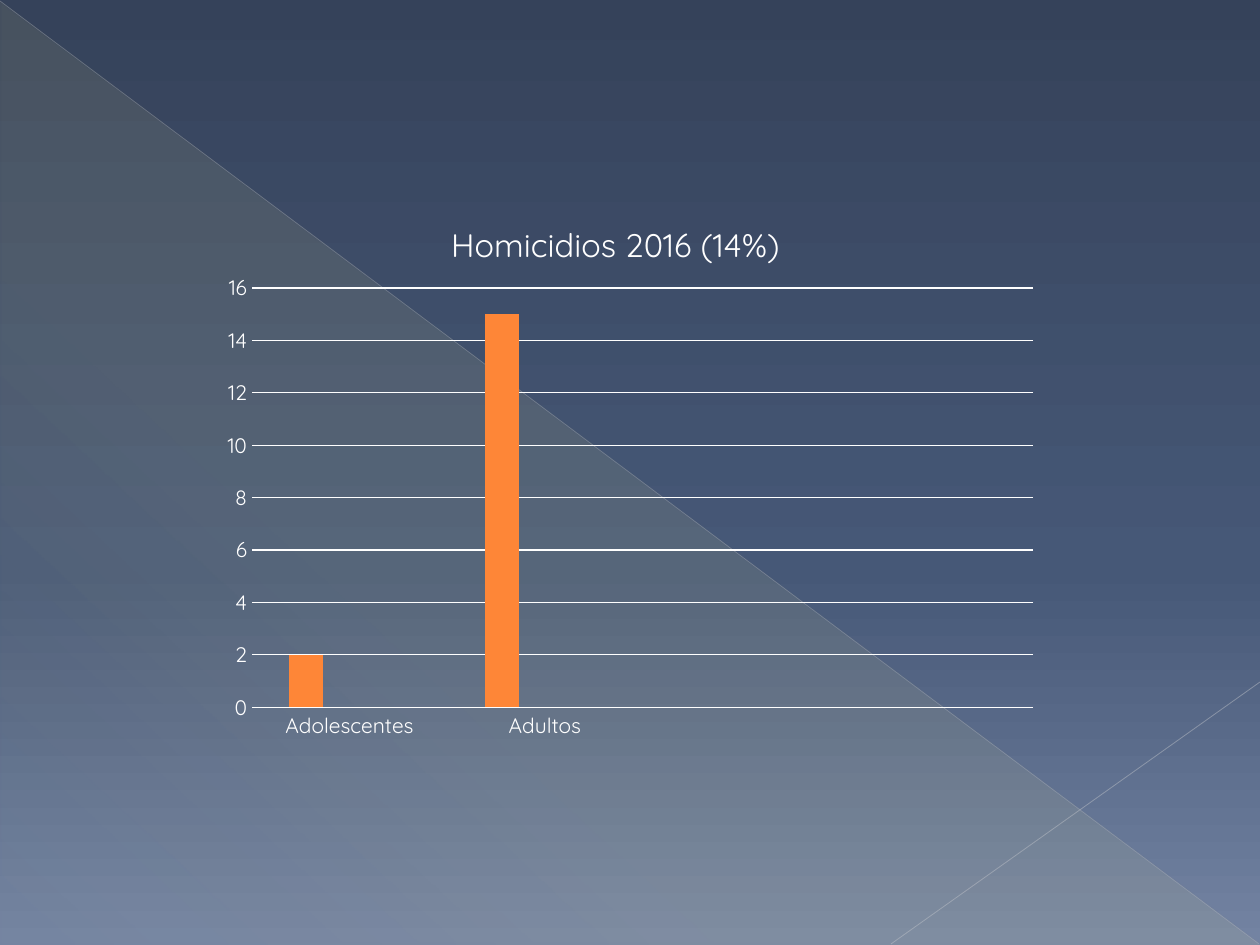
from dataclasses import dataclass

from lxml import etree
from pptx import Presentation
from pptx.chart.data import CategoryChartData
from pptx.dml.color import RGBColor
from pptx.enum.chart import XL_CHART_TYPE, XL_TICK_MARK
from pptx.enum.shapes import MSO_CONNECTOR, MSO_SHAPE
from pptx.oxml import parse_xml
from pptx.oxml.ns import nsdecls, qn
from pptx.util import Emu, Pt

COLUMNS = XL_CHART_TYPE.COLUMN_CLUSTERED
NO_TICK = XL_TICK_MARK.NONE
TRIANGLE = MSO_SHAPE.RIGHT_TRIANGLE
STRAIGHT = MSO_CONNECTOR.STRAIGHT
EMU_PER_PX = 914400 / 126
BLANK_LAYOUT = 6


@dataclass(frozen=True)
class Theme:
    font: str = "Quicksand"
    text: str = "FFFFFF"
    series: tuple = ("FE8637", "7598D9", "B32C16")
    # Gradient stops: position in %, colour, opacity in %
    sky: tuple = ((0, "35425A", 100), (60, "465877", 100), (100, "7383A2", 100))
    glow: tuple = ((0, "FFF39D", 10), (70, "FFF39D", 8), (100, "FFF39D", 1))
    long_ray: str = "BABDC4"
    short_ray: str = "C1C4CA"
    title_size: float = 18.6
    axis_size: int = 12
    chart_size: int = 10
    rule: float = 0.75


def px(length):
    return Emu(round(length * EMU_PER_PX))


def set_gradient(fill, element, stops, angle):
    """Fill with any number of stops, each with its own opacity."""
    fill.gradient()
    old = element.xpath(".//a:gradFill")[0]
    stops_xml = "".join(
        f'<a:gs pos="{pos * 1000}"><a:srgbClr val="{color}">'
        f'<a:alpha val="{opacity * 1000}"/></a:srgbClr></a:gs>'
        for pos, color, opacity in stops)
    old.getparent().replace(old, parse_xml(
        f'<a:gradFill {nsdecls("a")} rotWithShape="1"><a:gsLst>{stops_xml}</a:gsLst>'
        f'<a:lin ang="{angle * 60000}" scaled="0"/></a:gradFill>'))


def set_layout(parent, position, **fractions):
    """Place a chart part by fractions of the chart area."""
    for old in parent.findall(qn("c:layout")):
        parent.remove(old)
    modes = {"xMode": "edge", "yMode": "edge"}
    if "w" in fractions:
        modes = {"layoutTarget": "inner", **modes}
    layout = etree.Element(qn("c:layout"))
    manual = etree.SubElement(layout, qn("c:manualLayout"))
    for tag, value in {**modes, **fractions}.items():
        etree.SubElement(manual, qn(f"c:{tag}")).set("val", str(value))
    parent.insert(position, layout)


class SlideBuilder:
    def __init__(self, slide, theme):
        self.slide = slide
        self.theme = theme

    def background(self, stops, angle):
        set_gradient(self.slide.background.fill, self.slide.element, stops, angle)

    def triangle(self, left, top, width, height, stops, angle):
        shape = self.slide.shapes.add_shape(
            TRIANGLE, px(left), px(top), px(width), px(height))
        shape.shadow.inherit = False
        shape.line.fill.background()
        set_gradient(shape.fill, shape.element, stops, angle)

    def ray(self, start, end, color, width, opacity):
        ray = self.slide.shapes.add_connector(
            STRAIGHT, *(px(v) for v in (*start, *end)))
        ray.line.width = Pt(width)
        ray.line.color.rgb = RGBColor.from_string(color)
        line_color = ray.element.xpath(".//a:ln//a:srgbClr")[0]
        etree.SubElement(line_color, qn("a:alpha")).set("val", str(opacity * 1000))
        etree.SubElement(ray.element.spPr, qn("a:effectLst"))

    def style_font(self, font, size):
        font.name = self.theme.font
        font.size = Pt(size)
        font.bold = False
        font.color.rgb = RGBColor.from_string(self.theme.text)

    def style_rule(self, line):
        line.width = Pt(self.theme.rule)
        line.color.rgb = RGBColor.from_string(self.theme.text)

    def column_chart(self, left, top, width, height, title, categories, series):
        data = CategoryChartData()
        data.categories = categories
        for name, values in series.items():
            data.add_series(name, values)
        chart = self.slide.shapes.add_chart(
            COLUMNS, px(left), px(top), px(width), px(height), data).chart
        self.style_font(chart.font, self.theme.chart_size)
        chart.has_legend = False

        chart.has_title = True
        heading = chart.chart_title.text_frame.paragraphs[0]
        heading.text = title
        self.style_font(heading.font, self.theme.title_size)
        set_layout(chart.chart_title._element, 1, x=0.28, y=0.04)

        plot = chart.plots[0]
        plot.gap_width = 219
        plot.overlap = -27
        plot.vary_by_categories = False
        for columns, color in zip(plot.series, self.theme.series):
            columns.format.fill.solid()
            columns.format.fill.fore_color.rgb = RGBColor.from_string(color)
        plot_area = chart.element.xpath(".//c:plotArea")[0]
        set_layout(plot_area, 0, x=0.05, y=0.17, w=0.93, h=0.75)

        for axis in (chart.category_axis, chart.value_axis):
            axis.major_tick_mark = axis.minor_tick_mark = NO_TICK
            self.style_font(axis.tick_labels.font, self.theme.axis_size)
        self.style_rule(chart.category_axis.format.line)
        values_axis = chart.value_axis
        values_axis.minimum_scale, values_axis.maximum_scale = 0, 16
        values_axis.major_unit = 2
        values_axis.format.line.fill.background()
        self.style_rule(values_axis.major_gridlines.format.line)


def main():
    theme = Theme()
    deck = Presentation()
    deck.slide_width, deck.slide_height = px(1260), px(945)
    page = SlideBuilder(
        deck.slides.add_slide(deck.slide_layouts[BLANK_LAYOUT]), theme)

    page.background(theme.sky, 90)
    page.triangle(1, 2, 1259, 943, theme.glow, 133)
    page.ray((0, 1), (1259, 944), theme.long_ray, 0.39, 35)
    page.ray((1260, 682), (891, 944), theme.short_ray, 0.47, 45)

    no_values = (None,) * 4
    page.column_chart(
        210, 193, 840, 559, "Homicidios 2016 (14%)",
        ("Adolescentes", "Adultos", "", ""),
        {"Series 1": (2, 15, None, None),
         "Series 2": no_values,
         "Series 3": no_values})
    deck.save("out.pptx")


if __name__ == "__main__":
    main()
